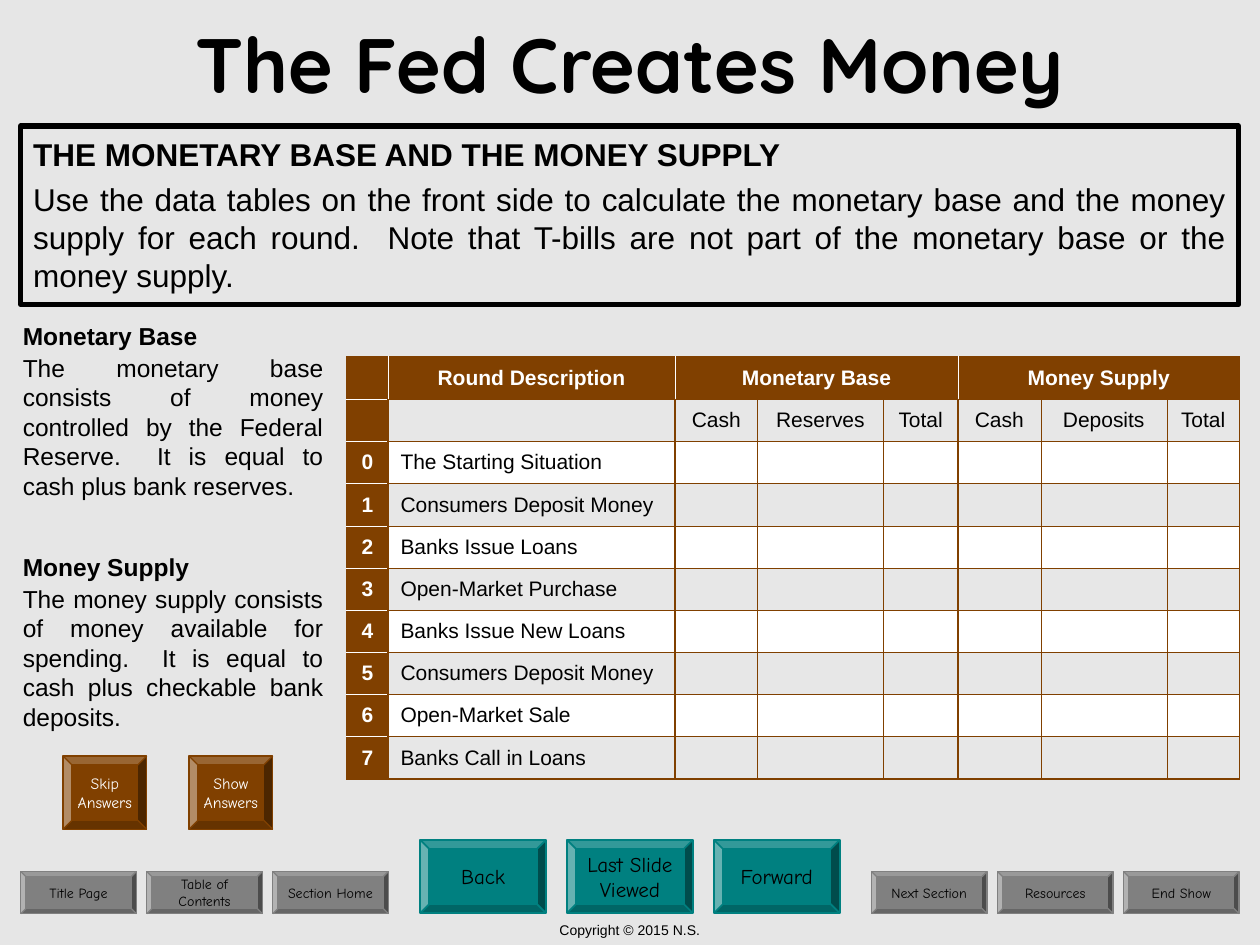
import pptx
import pptx.util
import pptx.dml.color
import pptx.enum.shapes
import pptx.enum.text
import pptx.oxml.ns
import lxml.etree

Cm = pptx.util.Cm
Pt = pptx.util.Pt
ALIGN = pptx.enum.text.PP_ALIGN
ANCHOR = pptx.enum.text.MSO_ANCHOR
SHAPE = pptx.enum.shapes.MSO_SHAPE
COLORS = {
    "page": "E6E6E6", "black": "000000", "white": "FFFFFF", "band": "E7E7E7",
    "brown": "804000", "teal": "008080", "gray": "808080",
}


def rgb(name):
    return pptx.dml.color.RGBColor.from_string(COLORS[name])


def add_xml(parent, tag, **attributes):
    return lxml.etree.SubElement(parent, pptx.oxml.ns.qn(tag), **attributes)


class SlideBuilder:
    body_font = "Arial"
    button_font = "Comic Neue"
    title_font = "Quicksand"

    def __init__(self, page):
        self.page = page
        page.background.fill.solid()
        page.background.fill.fore_color.rgb = rgb("page")

    def add_lines(self, frame, lines, size, align, color="black", bold=False, font=None):
        for index, line in enumerate(lines):
            para = frame.add_paragraph() if index else frame.paragraphs[0]
            para.alignment = align
            span = para.add_run()
            span.text = line
            span.font.size = Pt(size)
            span.font.name = font or self.body_font
            span.font.bold = bold
            span.font.color.rgb = rgb(color)

    def text(self, place, line, size, align=ALIGN.JUSTIFY, bold=False, font=None,
             anchor=ANCHOR.TOP):
        box = self.page.shapes.add_textbox(*map(Cm, place))
        box.text_frame.word_wrap = True
        box.text_frame.vertical_anchor = anchor
        self.add_lines(box.text_frame, [line], size, align, bold=bold, font=font)

    def button(self, place, lines, size, fill, color="black", width=0.75):
        box = self.page.shapes.add_shape(SHAPE.BEVEL, *map(Cm, place))
        box.shadow.inherit = False
        box.fill.solid()
        box.fill.fore_color.rgb = rgb(fill)
        box.line.color.rgb = rgb(fill)
        box.line.width = Pt(width)
        box.text_frame.word_wrap = False
        box.text_frame.vertical_anchor = ANCHOR.MIDDLE
        self.add_lines(box.text_frame, lines, size, ALIGN.CENTER, color,
                       font=self.button_font)

    def frame(self, place):
        box = self.page.shapes.add_shape(SHAPE.RECTANGLE, *map(Cm, place))
        box.shadow.inherit = False
        box.fill.background()
        box.line.color.rgb = rgb("black")
        box.line.width = Pt(3)
        add_xml(box.element.spPr.get_or_add_ln(), "a:round")

    def border(self, cell, side, color, width):
        line = add_xml(cell._tc.get_or_add_tcPr(), "a:ln" + side, w=str(Pt(width)))
        add_xml(add_xml(line, "a:solidFill"), "a:srgbClr", val=COLORS[color])

    def table(self, left, top, widths, row_height, rows, spans):
        count = len(rows)
        shape = self.page.shapes.add_table(
            count, len(widths), Cm(left), Cm(top), Cm(sum(widths)), Cm(row_height * count))
        table = shape.table
        table.horz_banding = False
        for column, width in zip(table.columns, widths):
            column.width = Cm(width)

        def vertical(row, edge):
            if row == 0 and 0 < edge < len(widths):
                return "white", 0.25
            return "brown", 1 if edge in (0, 1, 2, 5, 8) else 0.25

        def horizontal(edge, column):
            if edge in (0, count):
                return "brown", 1
            if column == 0:
                return "white", 0.25
            return "brown", 1 if edge == 1 else 0.25

        for row, values in enumerate(rows):
            table.rows[row].height = Cm(row_height)
            for column in range(len(widths)):
                cell = table.cell(row, column)
                right = column + (spans.get(column, 1) if row == 0 else 1)
                self.border(cell, "L", *vertical(row, column))
                self.border(cell, "R", *vertical(row, right))
                self.border(cell, "T", *horizontal(row, column))
                self.border(cell, "B", *horizontal(row + 1, column))
                heading = row == 0 or column == 0
                cell.fill.solid()
                cell.fill.fore_color.rgb = rgb(
                    "brown" if heading else "band" if row % 2 else "white")
                cell.margin_top = cell.margin_bottom = 0
                cell.vertical_anchor = ANCHOR.MIDDLE
                value = values[column] if column < len(values) else ""
                if value:
                    align = ALIGN.LEFT if column == 1 and row else ALIGN.CENTER
                    color = "white" if heading else "black"
                    self.add_lines(cell.text_frame, [value], 12, align, color, heading)
        for column, span in spans.items():
            table.cell(0, column).merge(table.cell(0, column + span - 1))


def main():
    deck = pptx.Presentation()
    deck.slide_width = Cm(25.4)
    deck.slide_height = Cm(19.05)
    builder = SlideBuilder(deck.slides.add_slide(deck.slide_layouts[6]))

    builder.text((0, 18.46, 25.4, 0.59), "Copyright © 2015 N.S.", 8, ALIGN.CENTER)
    for index, lines in enumerate((["Back"], ["Last Slide", "Viewed"], ["Forward"])):
        builder.button((8.47 + 2.96 * index, 16.93, 2.54, 1.48), lines, 12, "teal", width=1)
    navigation = (
        (0.42, (["Title Page"], ["Table of", "Contents"], ["Section Home"])),
        (17.57, (["Next Section"], ["Resources"], ["End Show"])),
    )
    for left, labels in navigation:
        for index, lines in enumerate(labels):
            builder.button((left + 2.54 * index, 17.57, 2.33, 0.85), lines, 8, "gray")

    builder.text((0, 0, 25.4, 2.54), "The Fed Creates Money", 44, ALIGN.CENTER, True,
                 builder.title_font, ANCHOR.MIDDLE)
    builder.text((0.42, 2.59, 24.55, 1.02), "THE MONETARY BASE AND THE MONEY SUPPLY", 18,
                 bold=True)

    rounds = (
        "The Starting Situation", "Consumers Deposit Money", "Banks Issue Loans",
        "Open-Market Purchase", "Banks Issue New Loans", "Consumers Deposit Money",
        "Open-Market Sale", "Banks Call in Loans",
    )
    rows = [
        ["", "Round Description", "Monetary Base", "", "", "Money Supply"],
        ["", "", "Cash", "Reserves", "Total", "Cash", "Deposits", "Total"],
    ] + [[str(number), name] for number, name in enumerate(rounds)]
    builder.table(6.99, 7.2, (0.83, 5.79, 1.66, 2.54, 1.5, 1.67, 2.54, 1.47), 0.85, rows,
                  {2: 3, 5: 3})

    builder.frame((0.42, 2.54, 24.55, 3.6))
    builder.text(
        (0.42, 3.51, 24.55, 2.57),
        "Use the data tables on the front side to calculate the monetary base and the money "
        "supply for each round.  Note that T-bills are not part of the monetary base or the "
        "money supply.", 18)

    definitions = (
        (6.35, "Monetary Base",
         "The monetary base consists of money controlled by the Federal Reserve.  "
         "It is equal to cash plus bank reserves."),
        (11.01, "Money Supply",
         "The money supply consists of money available for spending.  "
         "It is equal to cash plus checkable bank deposits."),
    )
    for top, term, meaning in definitions:
        builder.text((0.21, top, 6.56, 0.86), term, 14, bold=True)
        builder.text((0.21, top + 0.64, 6.56, 3.25), meaning, 14)

    for left, word in ((1.27, "Skip"), (3.81, "Show")):
        builder.button((left, 15.24, 1.69, 1.48), [word, "Answers"], 9, "brown", "white")

    deck.save("out.pptx")


if __name__ == "__main__":
    main()
